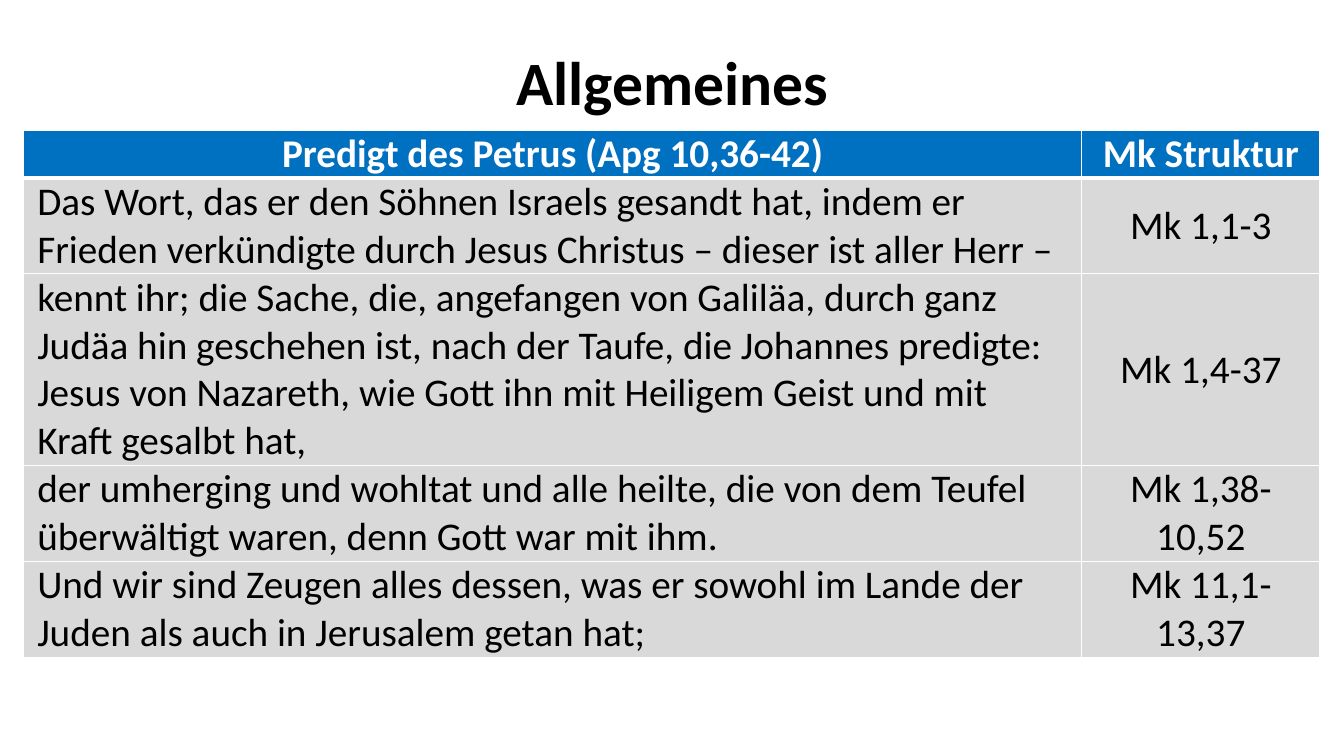
from lxml import etree
from pptx import Presentation
from pptx import util as u
from pptx.dml.color import RGBColor
from pptx.enum import text
from pptx.oxml import ns

BLACK = RGBColor(0x00, 0x00, 0x00)
WHITE = RGBColor(0xFF, 0xFF, 0xFF)
BLUE = RGBColor(0x00, 0x70, 0xC0)
GREY = RGBColor(0xD9, 0xD9, 0xD9)

CENTER = text.PP_ALIGN.CENTER
LEFT = text.PP_ALIGN.LEFT
MIDDLE = text.MSO_ANCHOR.MIDDLE
COLUMN_WIDTHS = (10.5, 2.36)
ROW_HEIGHTS = (0.47, 0.95, 1.9, 0.95, 0.95)
ROWS = (
    ("Predigt des Petrus (Apg 10,36-42)", "Mk Struktur"),
    ("Das Wort, das er den Söhnen Israels gesandt hat, indem er Frieden "
     "verkündigte durch Jesus Christus – dieser ist aller Herr –", "Mk 1,1-3"),
    ("kennt ihr; die Sache, die, angefangen von Galiläa, durch ganz Judäa hin "
     "geschehen ist, nach der Taufe, die Johannes predigte: Jesus von Nazareth, "
     "wie Gott ihn mit Heiligem Geist und mit Kraft gesalbt hat,", "Mk 1,4-37"),
    ("der umherging und wohltat und alle heilte, die von dem Teufel "
     "überwältigt waren, denn Gott war mit ihm.", "Mk 1,38-10,52"),
    ("Und wir sind Zeugen alles dessen, was er sowohl im Lande der Juden als "
     "auch in Jerusalem getan hat;", "Mk 11,1-13,37"),
)


def set_values(target, values):
    for name, value in values.items():
        setattr(target, name, value)


def write(frame, words, size, color, bold, align):
    para = frame.paragraphs[0]
    para.alignment = align
    span = para.add_run()
    span.text = words
    set_values(span.font, {"name": "Calibri", "size": u.Pt(size), "bold": bold})
    span.font.color.rgb = color
    return para


def add_border(cell, side, points):
    properties = cell._tc.get_or_add_tcPr()
    line = etree.SubElement(properties, ns.qn(f"a:ln{side}"), w=str(u.Pt(points)))
    fill = etree.SubElement(line, ns.qn("a:solidFill"))
    etree.SubElement(fill, ns.qn("a:srgbClr"), val=str(WHITE))


def format_cell(cell, words, row, column):
    header = row == 0
    set_values(cell, {
        "vertical_anchor": MIDDLE,
        "margin_left": u.Inches(0.14), "margin_right": u.Inches(0.14),
        "margin_top": 0, "margin_bottom": 0,
    })
    widths = {"L": 1, "R": 1, "T": 3 if row == 1 else 1, "B": 3 if header else 1}
    for side, points in widths.items():
        add_border(cell, side, points)
    cell.fill.solid()
    cell.fill.fore_color.rgb = BLUE if header else GREY
    align = CENTER if header or column == 1 else LEFT
    write(cell.text_frame, words, 28, WHITE if header else BLACK, header, align)


def add_title(page, words):
    title = page.shapes.title
    set_values(title, {
        "left": u.Inches(0.92), "top": u.Inches(0.4),
        "width": u.Inches(11.5), "height": u.Inches(0.89),
    })
    set_values(title.text_frame, {"vertical_anchor": MIDDLE, "word_wrap": True})
    para = write(title.text_frame, words, 44, BLACK, True, CENTER)
    para.line_spacing = 0.9


def add_sermon_table(page):
    table = page.shapes.add_table(
        len(ROWS), len(COLUMN_WIDTHS), u.Inches(0.23), u.Inches(1.29),
        u.Inches(sum(COLUMN_WIDTHS)), u.Inches(sum(ROW_HEIGHTS))).table
    for column, width in zip(table.columns, COLUMN_WIDTHS):
        column.width = u.Inches(width)
    for row, height in zip(table.rows, ROW_HEIGHTS):
        row.height = u.Inches(height)
    for row, entries in enumerate(ROWS):
        for column, words in enumerate(entries):
            format_cell(table.cell(row, column), words, row, column)


def main():
    """Build the slide comparing Peter's sermon with the structure of Mark."""
    deck = Presentation()
    set_values(deck, {"slide_width": u.Inches(13.33), "slide_height": u.Inches(7.5)})
    page = deck.slides.add_slide(deck.slide_layouts[5])
    add_title(page, "Allgemeines")
    add_sermon_table(page)
    deck.save("out.pptx")


if __name__ == "__main__":
    main()
